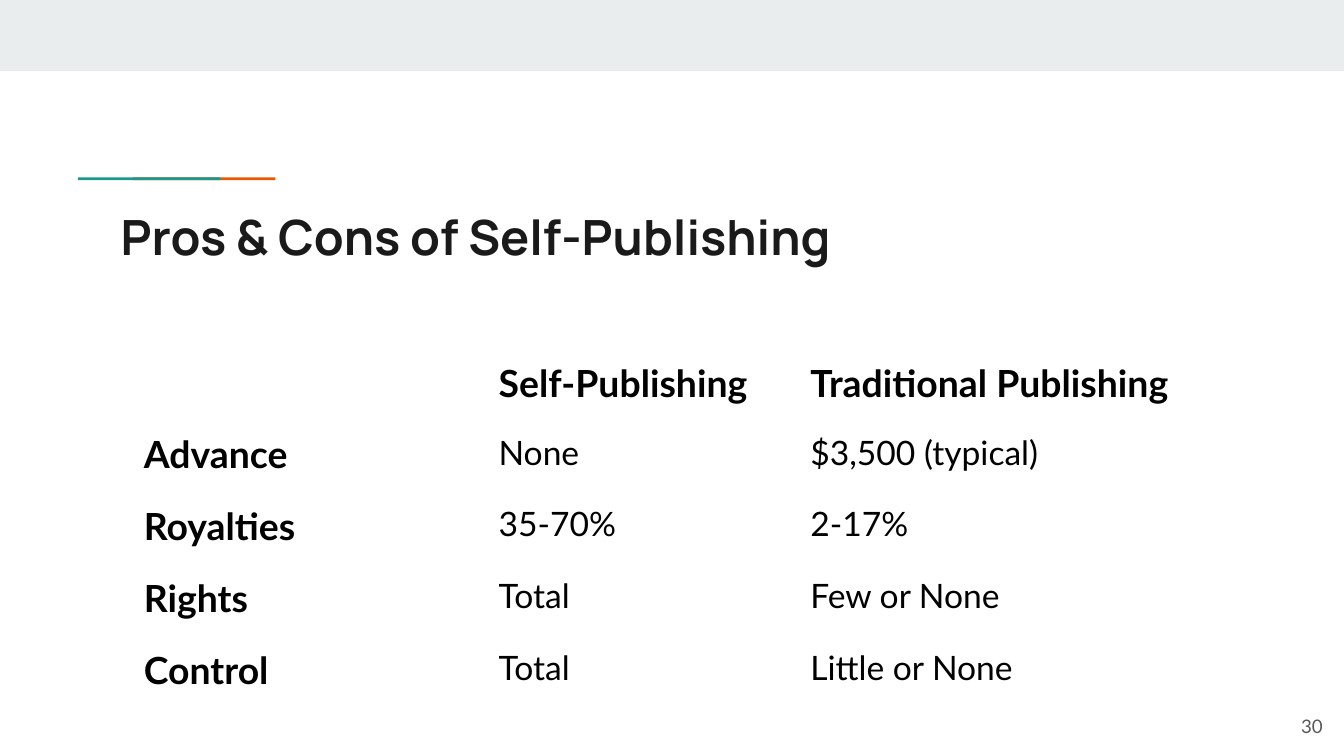
from dataclasses import dataclass

from pptx import Presentation
from pptx.dml.color import RGBColor
from pptx.enum.shapes import MSO_SHAPE
from pptx.enum.text import MSO_ANCHOR, PP_ALIGN
from pptx.util import Inches, Pt


@dataclass(frozen=True)
class Theme:
    """Colours, fonts and type sizes of the slide."""
    band: str = "E9EDEE"
    teal: str = "1A9988"
    orange: str = "EB5600"
    title: str = "1A1A1A"
    body: str = "000000"
    number: str = "595959"
    heading_font: str = "Manrope"
    body_font: str = "Lato"
    title_size: int = 26
    header_size: int = 20
    body_size: int = 18
    number_size: int = 10


THEME = Theme()
MARGIN = Inches(0.1)
COLUMN_WIDTHS = (2.64, 2.32, 2.96)
ROW_HEIGHT = 0.53
COMPARISON = (
    ("", "Self-Publishing", "Traditional Publishing"),
    ("Advance", "None", "$3,500 (typical)"),
    ("Royalties", "35-70%", "2-17%"),
    ("Rights", "Total", "Few or None"),
    ("Control", "Total", "Little or None"),
)


def add_bar(slide, left, top, width, height, color):
    """Add a plain filled rectangle."""
    shape = slide.shapes.add_shape(
        MSO_SHAPE.RECTANGLE, Inches(left), Inches(top), Inches(width), Inches(height))
    shape.shadow.inherit = False
    shape.fill.solid()
    shape.fill.fore_color.rgb = RGBColor.from_string(color)
    shape.line.fill.background()


def add_run(paragraph, text, size, font, color, bold=False):
    """Add one formatted run to a paragraph."""
    run = paragraph.add_run()
    run.text = text
    run.font.size = Pt(size)
    run.font.name = font
    run.font.bold = bold
    run.font.color.rgb = RGBColor.from_string(color)


def set_margins(holder):
    """Give a text frame or table cell equal margins."""
    holder.margin_left = holder.margin_right = MARGIN
    holder.margin_top = holder.margin_bottom = MARGIN


def add_text(slide, left, top, width, height, anchor, alignment):
    """Add a wrapping text box and return its paragraph."""
    box = slide.shapes.add_textbox(
        Inches(left), Inches(top), Inches(width), Inches(height))
    frame = box.text_frame
    frame.word_wrap = True
    frame.vertical_anchor = anchor
    set_margins(frame)
    paragraph = frame.paragraphs[0]
    paragraph.alignment = alignment
    return paragraph


def fill_cell(cell, text, is_header):
    """Write one table cell in header or body style."""
    cell.fill.background()
    set_margins(cell)
    if text:
        size = THEME.header_size if is_header else THEME.body_size
        add_run(cell.text_frame.paragraphs[0], text, size,
                THEME.body_font, THEME.body, is_header)


def add_comparison(slide, left, top):
    """Add the table comparing the two ways of publishing."""
    frame = slide.shapes.add_table(
        len(COMPARISON), len(COLUMN_WIDTHS), Inches(left), Inches(top),
        Inches(sum(COLUMN_WIDTHS)), Inches(ROW_HEIGHT * len(COMPARISON)))
    table = frame.table
    table.first_row = False
    table.horz_banding = False
    for column, width in zip(table.columns, COLUMN_WIDTHS):
        column.width = Inches(width)
    for row_index, texts in enumerate(COMPARISON):
        for column_index, text in enumerate(texts):
            is_header = row_index == 0 or column_index == 0
            fill_cell(table.cell(row_index, column_index), text, is_header)


def main():
    """Build and save the slide."""
    presentation = Presentation()
    presentation.slide_width = Inches(10)
    presentation.slide_height = Inches(10) * 9 // 16
    slide = presentation.slides.add_slide(presentation.slide_layouts[6])

    add_bar(slide, 0, 0, 10, 0.53, THEME.band)
    for left, color in ((0.99, THEME.orange), (0.58, THEME.teal)):
        add_bar(slide, left, 1.32, 1.06, 0.02, color)

    title = add_text(slide, 0.8, 1.44, 8.41, 0.59, MSO_ANCHOR.TOP, PP_ALIGN.LEFT)
    add_run(title, "Pros & Cons of Self-Publishing", THEME.title_size,
            THEME.heading_font, THEME.title, True)
    add_comparison(slide, 0.97, 2.58)
    number = add_text(slide, 9.34, 5.19, 0.6, 0.43, MSO_ANCHOR.MIDDLE, PP_ALIGN.RIGHT)
    add_run(number, "30", THEME.number_size, THEME.body_font, THEME.number)

    presentation.save("out.pptx")


if __name__ == "__main__":
    main()
